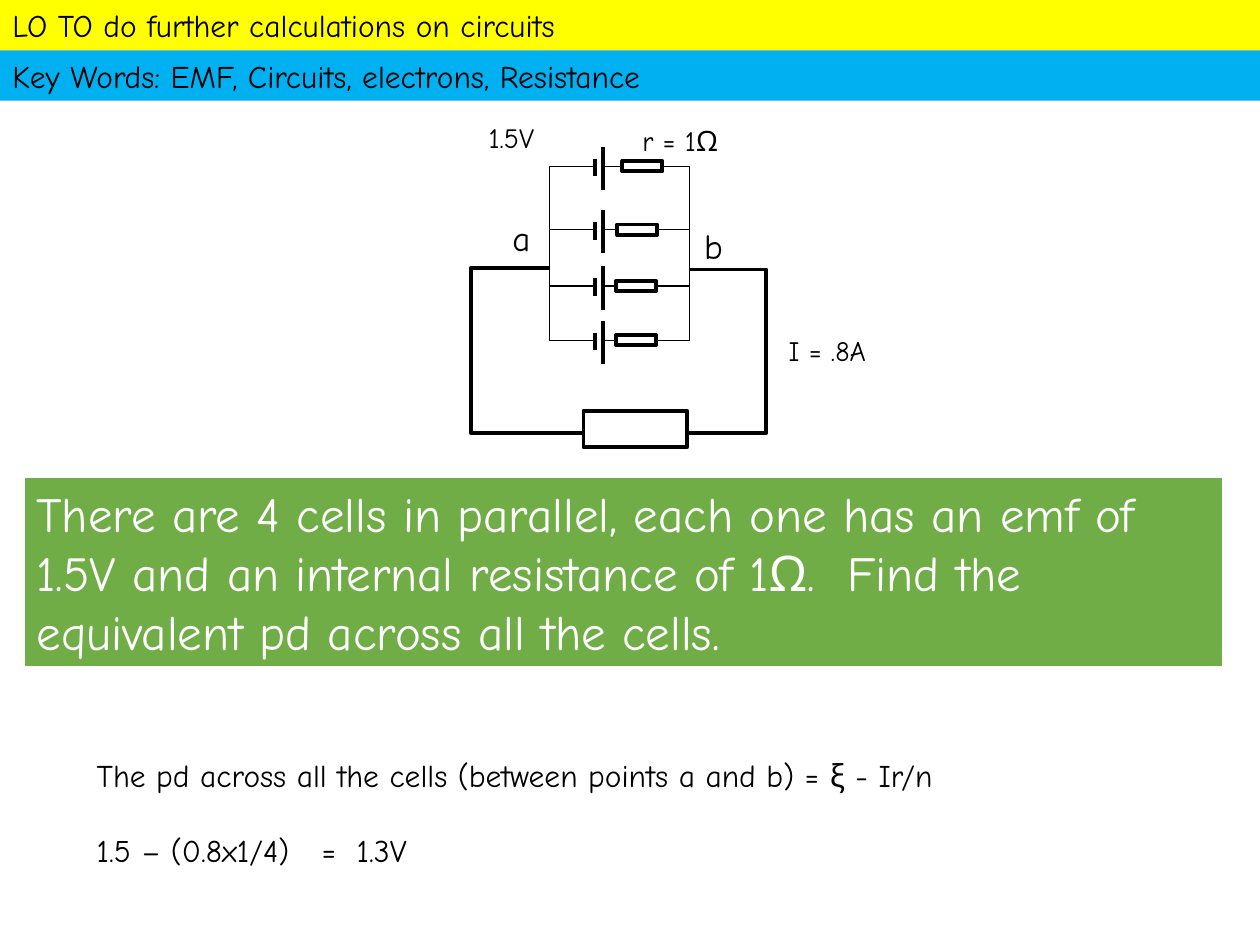
from itertools import pairwise

from lxml import etree
from pptx import Presentation
from pptx.dml.color import RGBColor
from pptx.enum.shapes import MSO_CONNECTOR, MSO_SHAPE
from pptx.enum.text import MSO_ANCHOR, PP_ALIGN
from pptx.oxml.ns import qn
from pptx.util import Pt

RECT = MSO_SHAPE.RECTANGLE
STRAIGHT = MSO_CONNECTOR.STRAIGHT
LEFT = PP_ALIGN.LEFT
MIDDLE, TOP = MSO_ANCHOR.MIDDLE, MSO_ANCHOR.TOP
FONT = "Comic Neue"
BLACK, WHITE = "000000", "FFFFFF"
THIN, THICK = 0.75, 2.25


def write(sp, lines, size, color=BLACK, **frame):
    """Fill a shape with one paragraph per line and set its text frame options."""
    tf = sp.text_frame
    for name, value in frame.items():
        setattr(tf, name, value)
    for i, line in enumerate(lines):
        p = tf.add_paragraph() if i else tf.paragraphs[0]
        p.alignment = LEFT
        r = p.add_run()
        r.text = line
        r.font.name, r.font.size = FONT, Pt(size)
        r.font.color.rgb = RGBColor.from_string(color)


def outline(sp, width, color=BLACK):
    sp.line.color.rgb = RGBColor.from_string(color)
    sp.line.width = Pt(width)


prs = Presentation()
prs.slide_width, prs.slide_height = Pt(720), Pt(540)
s = prs.slides.add_slide(prs.slide_layouts[6])

# Coloured panels: box, fill, border colour, text size, text colour, text
panels = [
    ((0, 0, 720, 28.8), "FFFF00", None, 18, BLACK,
     "LO TO do further calculations on circuits"),
    ((0, 28.8, 720, 28.8), "00B0F0", None, 18, BLACK,
     "Key Words: EMF, Circuits, electrons, Resistance"),
    ((13.8, 272.4, 685.2, 108.8), "70AD47", WHITE, 28, WHITE,
     "There are 4 cells in parallel, each one has an emf of 1.5V and an "
     "internal resistance of 1Ω.  Find the equivalent pd across all the cells."),
]
for box, fill, border, size, color, text in panels:
    sp = s.shapes.add_shape(RECT, *map(Pt, box))
    sp.shadow.inherit = False
    sp.fill.solid()
    sp.fill.fore_color.rgb = RGBColor.from_string(fill)
    if border:
        outline(sp, 1.5, border)
    else:
        sp.line.fill.background()
    write(sp, [text], size, color, word_wrap=True, vertical_anchor=MIDDLE)

# Circuit: rail a on the left, rail b on the right, one cell on each row
rail_a, rail_b = 314, 394.2
long_plate, short_plate = 344.8, 339.8
resistor_w, resistor_h = 22.8, 6
load_x, load_y, load_w, load_h = 333.4, 234.7, 59, 20.9
rows = [(95, 355.7), (131.3, 352.6), (163.4, 352.1), (194.4, 352.1)]

lines = []
resistors = [(load_x, load_y, load_w, load_h)]
for y, x in rows:
    mid = y + 1.2
    lines += [
        (rail_a, y, short_plate, y, THIN),
        (long_plate, y, x, y, THIN),
        (x + resistor_w, y, rail_b, y, THIN),
        (short_plate, mid - 5.5, short_plate, mid + 4.5, THICK),
        (long_plate, mid - 12.3, long_plate, mid + 12.3, THICK),
    ]
    resistors.append((x, y - resistor_h / 2, resistor_w, resistor_h))
for (y1, _), (y2, _) in pairwise(rows):
    lines += [(rail, y1, rail, y2, THIN) for rail in (rail_a, rail_b)]

for x1, y1, x2, y2, width in lines:
    sp = s.shapes.add_connector(STRAIGHT, Pt(x1), Pt(y1), Pt(x2), Pt(y2))
    outline(sp, width)
    etree.SubElement(sp._element.spPr, qn("a:effectLst"))

for box in resistors:
    sp = s.shapes.add_shape(RECT, *map(Pt, box))
    sp.shadow.inherit = False
    sp.fill.background()
    outline(sp, THICK)

# Outer wires from each rail round to the load
bottom = 247.6
for rail, y, side, load_end in [(rail_a, 153, 269.3, load_x),
                                (rail_b, 154, 437.8, load_x + load_w)]:
    fb = s.shapes.build_freeform(Pt(rail), Pt(y))
    corners = [(side, y), (side, bottom), (load_end, bottom)]
    fb.add_line_segments([(Pt(a), Pt(b)) for a, b in corners], close=False)
    sp = fb.convert_to_shape()
    sp.shadow.inherit = False
    sp.fill.background()
    outline(sp, THICK)

# Circuit labels
labels = [
    ((443.5, 187.2, 71.3, 26.6), "I = .8A", 16),
    ((272.2, 65.5, 46.1, 26.6), "1.5V", 16),
    ((360, 67, 62.6, 26.6), "r = 1Ω", 16),
    ((285.8, 120.2, 24.5, 31), "a", 20),
    ((395.3, 124.6, 26.6, 31), "b", 20),
]
for box, text, size in labels:
    sp = s.shapes.add_textbox(*map(Pt, box))
    write(sp, [text], size, word_wrap=False, vertical_anchor=TOP)

# Worked answer, with tab stops around the equals sign
sp = s.shapes.add_textbox(Pt(48.2), Pt(428.4), Pt(640), Pt(72.7))
write(sp, ["The pd across all the cells (between points a and b) = ξ - Ir/n",
           "1.5 – (0.8x1/4)\t=\t1.3V"], 18, word_wrap=True, vertical_anchor=TOP)
p = sp.text_frame.paragraphs[1]
p.space_before = Pt(21.5)
tabs = etree.SubElement(p._p.get_or_add_pPr(), qn("a:tabLst"))
for stop in (128.5, 148.5):
    etree.SubElement(tabs, qn("a:tab"), pos=str(Pt(stop)), algn="l")

prs.save("out.pptx")
